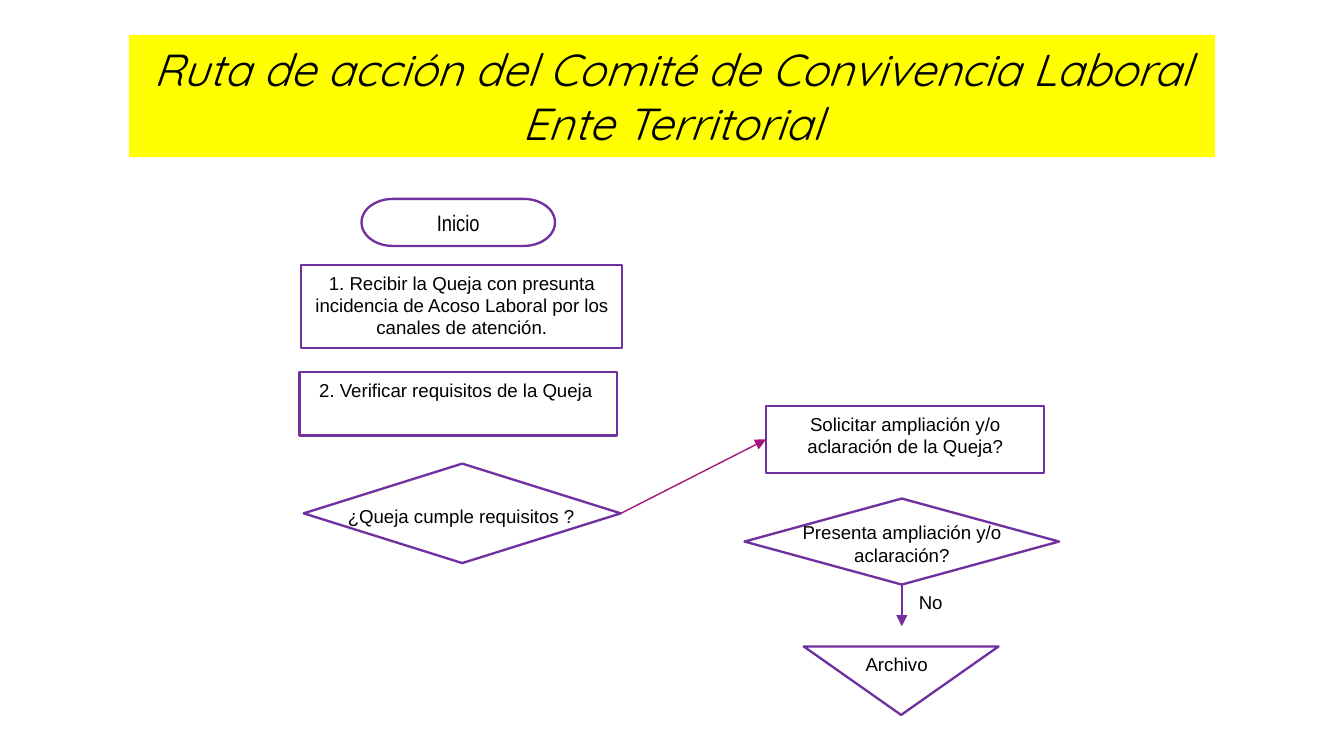
from dataclasses import dataclass

from lxml import etree
from pptx import Presentation
from pptx.dml.color import RGBColor
from pptx.enum import shapes, text
from pptx.oxml import ns
from pptx.util import Inches, Pt

SHAPE = shapes.MSO_SHAPE
TOP, MIDDLE = text.MSO_ANCHOR.TOP, text.MSO_ANCHOR.MIDDLE
LEFT, CENTER = text.PP_ALIGN.LEFT, text.PP_ALIGN.CENTER
SITES = {"left": 1, "bottom": 2, "right": 3}


@dataclass(frozen=True)
class Theme:
    ink: str = "000000"
    paper: str = "FFFFFF"
    banner: str = "FFFF00"
    outline: str = "7030A0"
    link: str = "A2167D"
    title_font: str = "Quicksand"
    start_font: str = "Arial Narrow"
    body_font: str = "Arial"
    title_size: float = 24
    start_size: float = 12
    body_size: float = 10
    outline_width: float = 1.25
    link_width: float = 0.75


THEME = Theme()


def color(value):
    return RGBColor.from_string(value)


def write(shape, words, font=THEME.body_font, size=THEME.body_size,
          italic=None, align=CENTER, anchor=TOP):
    frame = shape.text_frame
    frame.word_wrap = True
    frame.vertical_anchor = anchor
    para = frame.paragraphs[0]
    para.alignment = align
    span = para.add_run()
    span.text = words
    span.font.name = font
    span.font.size = Pt(size)
    span.font.italic = italic
    span.font.color.rgb = color(THEME.ink)


def add_node(page, kind, box, fill=THEME.paper, outline=THEME.outline):
    """Add a preset shape; fill or outline may be None."""
    node = page.shapes.add_shape(kind, *map(Inches, box))
    node.shadow.inherit = False
    if fill:
        node.fill.solid()
        node.fill.fore_color.rgb = color(fill)
    else:
        node.fill.background()
    if outline:
        node.line.color.rgb = color(outline)
        node.line.width = Pt(THEME.outline_width)
    else:
        node.line.fill.background()
    return node


def add_label(page, box, words):
    write(page.shapes.add_textbox(*map(Inches, box)), words)


def add_step(page, box, words):
    step = add_node(page, SHAPE.RECTANGLE, box)
    write(step, words)
    return step


def add_decision(page, box, words, label_box):
    """Add a diamond with its question; label_box is relative to the diamond."""
    diamond = add_node(page, SHAPE.FLOWCHART_DECISION, box, fill=None)
    left, top, width, height = label_box
    add_label(page, (box[0] + left, box[1] + top, width, height), words)
    return diamond


def add_arrow(page, start, end, line_color, width):
    arrow = page.shapes.add_connector(
        shapes.MSO_CONNECTOR.STRAIGHT, *map(Inches, (*start, *end)))
    arrow.line.color.rgb = color(line_color)
    arrow.line.width = Pt(width)
    properties = arrow.element.spPr
    etree.SubElement(properties.find(ns.qn("a:ln")), ns.qn("a:tailEnd"), type="triangle")
    etree.SubElement(properties, ns.qn("a:effectLst"))
    return arrow


def add_title(page, box):
    banner = add_node(page, SHAPE.RECTANGLE, box, THEME.banner, outline=None)
    write(banner, "Ruta de acción del Comité de Convivencia Laboral Ente Territorial",
          THEME.title_font, THEME.title_size, italic=True)
    banner.text_frame.auto_size = text.MSO_AUTO_SIZE.SHAPE_TO_FIT_TEXT


def add_intake(page, box):
    """Add the left column and return its closing decision."""
    left, top, width, _ = box
    start = add_node(page, SHAPE.FLOWCHART_TERMINATOR, (left + 0.46, top, 1.44, 0.35))
    write(start, "Inicio", THEME.start_font, THEME.start_size, anchor=MIDDLE)
    add_step(page, (left + 0.01, top + 0.49, width, 0.62),
             "1. Recibir la Queja con presunta incidencia de Acoso Laboral "
             "por los canales de atención.")
    add_step(page, (left, top + 1.29, 2.36, 0.47), "2. Verificar requisitos de la Queja ")
    return add_decision(page, (left + 0.03, top + 1.97, 2.36, 0.74),
                        "¿Queja cumple requisitos ?", (0.22, 0.26, 1.9, 0.4))


def add_clarification(page, box):
    """Add the right column and return its opening step."""
    left, top, width, _ = box
    middle = left + width / 2
    request = add_step(page, (left + 0.16, top, 2.07, 0.5),
                       "Solicitar ampliación y/o aclaración de la Queja?")
    diamond = add_decision(page, (left, top + 0.69, width, 0.64),
                           "Presenta ampliación y/o aclaración?", (0.07, 0.12, 2.2, 0.56))
    arrow = add_arrow(page, (middle, top + 1.33), (middle, top + 1.64),
                      THEME.outline, THEME.outline_width)
    arrow.begin_connect(diamond, SITES["bottom"])
    add_label(page, (left + 1.15, top + 1.33, 0.47, 0.21), "No")
    archive = add_node(page, SHAPE.FLOWCHART_MERGE, (left + 0.44, top + 1.79, 1.45, 0.51))
    write(archive, "Archivo", align=LEFT)
    return request


def main():
    deck = Presentation()
    deck.slide_width = Inches(10)
    deck.slide_height = deck.slide_width * 9 // 16
    page = deck.slides.add_slide(deck.slide_layouts[6])
    add_title(page, (0.96, 0.26, 8.08, 0.91))
    decision = add_intake(page, (2.23, 1.48, 2.39, 2.71))
    request = add_clarification(page, (5.54, 3.02, 2.34, 2.3))
    link = add_arrow(page, (4.62, 3.82), (5.7, 3.27), THEME.link, THEME.link_width)
    link.begin_connect(decision, SITES["right"])
    link.end_connect(request, SITES["left"])
    deck.save("out.pptx")


if __name__ == "__main__":
    main()
